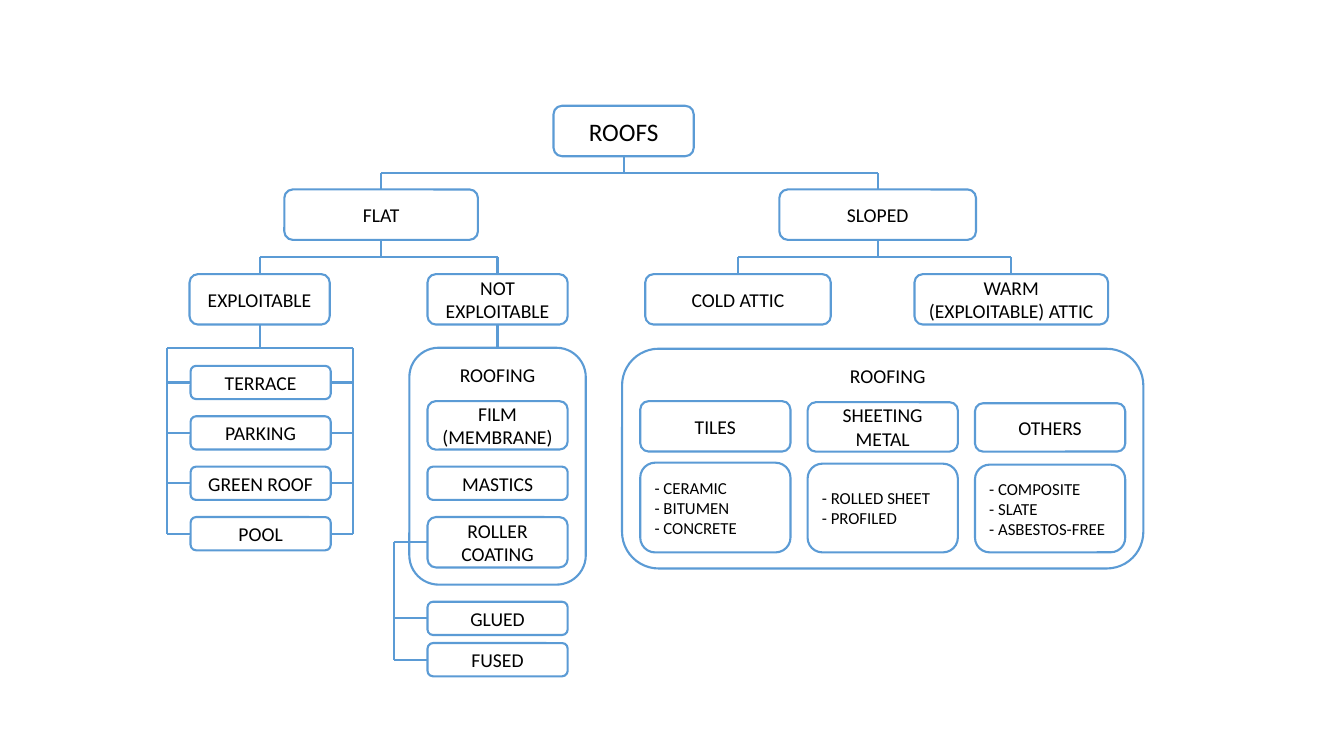
"""Builds a slide with a classification tree of roofs."""
from lxml.etree import SubElement
from pptx import Presentation
from pptx.dml.color import RGBColor
from pptx.enum.shapes import MSO_CONNECTOR, MSO_SHAPE
from pptx.enum.text import MSO_ANCHOR, PP_ALIGN
from pptx.oxml.ns import qn
from pptx.util import Inches, Pt

COLORS = {"line": "5B9BD5", "text": "000000"}
FONT = "Calibri"
TOP, LEFT, BOTTOM, RIGHT = range(4)

ROOT = ("ROOFS", 5.49, 1.05, 1.39)
BRANCHES = [
    ("FLAT", 2.82, 1.88, 1.92),
    ("SLOPED", 7.73, 1.88, 1.95),
    ("EXPLOITABLE", 1.88, 2.72, 1.39),
    ("NOT EXPLOITABLE", 4.24, 2.72, 1.39),
    ("COLD ATTIC", 6.4, 2.72, 1.84),
    ("WARM (EXPLOITABLE) ATTIC", 9.07, 2.72, 1.92),
]
TREE = [
    ("ROOFS", ["FLAT", "SLOPED"], 1.72),
    ("FLAT", ["EXPLOITABLE", "NOT EXPLOITABLE"], 2.55),
    ("SLOPED", ["COLD ATTIC", "WARM (EXPLOITABLE) ATTIC"], 2.55),
]
USES = ["TERRACE", "PARKING", "GREEN ROOF", "POOL"]
FLAT_ROOFING = [
    ("FILM (MEMBRANE)", 3.98, 0.48),
    ("MASTICS", 4.63, 0.33),
    ("ROLLER COATING", 5.13, 0.5),
    ("GLUED", 5.97, 0.33),
    ("FUSED", 6.38, 0.33),
]
SLOPED_ROOFING = [
    ("TILES", ["- CERAMIC", "- BITUMEN", "- CONCRETE"]),
    ("SHEETING METAL", ["- ROLLED SHEET", "- PROFILED"]),
    ("OTHERS", ["- COMPOSITE", "- SLATE", "- ASBESTOS-FREE"]),
]
FLAT_GROUP = (4.06, 3.45, 1.75, 2.35)
SLOPED_GROUP = (6.17, 3.46, 5.17, 2.18)
GROUP_LABELS = [("ROOFING", 3.98, 3.55, 1.91), ("ROOFING", 7.83, 3.56, 1.95)]
BOX_HEIGHT, ITEM_HEIGHT = 0.5, 0.33
USES_BAR_Y, USES_RAILS = 3.45, ((LEFT, 1.66), (RIGHT, 3.5))
ROLLER_RAIL_X = 3.91


def color(name):
    return RGBColor.from_string(COLORS[name])


def write(shape, lines, size=14, alignment=PP_ALIGN.CENTER):
    frame = shape.text_frame
    frame.word_wrap = True
    frame.vertical_anchor = MSO_ANCHOR.MIDDLE
    frame.text = "\n".join(lines)
    for paragraph in frame.paragraphs:
        paragraph.alignment = alignment
        paragraph.font.size = Pt(size)
        paragraph.font.name = FONT
        paragraph.font.color.rgb = color("text")


def add_box(slide, left, top, width, height):
    shape = slide.shapes.add_shape(
        MSO_SHAPE.ROUNDED_RECTANGLE, *map(Inches, (left, top, width, height)))
    shape.shadow.inherit = False
    shape.fill.background()
    shape.line.color.rgb = color("line")
    shape.line.width = Pt(1.5)
    return shape


def side_middle(shape, side):
    x = {LEFT: shape.left, RIGHT: shape.left + shape.width}.get(
        side, shape.left + shape.width // 2)
    y = {TOP: shape.top, BOTTOM: shape.top + shape.height}.get(
        side, shape.top + shape.height // 2)
    return x, y


def add_line(slide, start, end):
    line = slide.shapes.add_connector(MSO_CONNECTOR.STRAIGHT, *start, *end)
    line.line.color.rgb = color("line")
    line.line.width = Pt(1.5)
    SubElement(line._element.spPr, qn("a:effectLst"))
    return line


def add_stub(slide, shape, side, x=None, y=None):
    """Joins a side of a box to a rail and returns the point on the rail."""
    start = side_middle(shape, side)
    end = (start[0] if x is None else x, start[1] if y is None else y)
    add_line(slide, start, end).begin_connect(shape, side)
    return end


def main():
    presentation = Presentation()
    presentation.slide_width, presentation.slide_height = Inches(13.33), Inches(7.5)
    slide = presentation.slides.add_slide(presentation.slide_layouts[6])

    boxes = {}

    def add_node(text, left, top, width, height, size=14):
        boxes[text] = add_box(slide, left, top, width, height)
        write(boxes[text], [text], size)

    add_node(*ROOT, BOX_HEIGHT, 18)
    for branch in BRANCHES:
        add_node(*branch, BOX_HEIGHT)
    for row, use in enumerate(USES):
        add_node(use, 1.89, 3.63 + 0.5 * row, 1.39, ITEM_HEIGHT)
    for text, top, height in FLAT_ROOFING:
        add_node(text, 4.24, top, 1.39, height)
    for column, (text, details) in enumerate(SLOPED_ROOFING):
        left, shift = 6.35 + 1.66 * column, 0.01 * column
        add_node(text, left, 3.98 + shift, 1.49, 0.5 - shift)
        detail_box = add_box(slide, left, 4.59 + shift, 1.49, 0.89 - shift)
        write(detail_box, details, 12, PP_ALIGN.LEFT)

    flat_group = add_box(slide, *FLAT_GROUP)
    add_box(slide, *SLOPED_GROUP)
    for text, left, top, width in GROUP_LABELS:
        label = slide.shapes.add_textbox(
            *map(Inches, (left, top, width, ITEM_HEIGHT)))
        write(label, [text])

    for parent, children, bar_y in TREE:
        add_stub(slide, boxes[parent], BOTTOM, y=Inches(bar_y))
        ends = [add_stub(slide, boxes[child], TOP, y=Inches(bar_y))
                for child in children]
        add_line(slide, ends[0], ends[-1])

    bar_middle = add_stub(slide, boxes["EXPLOITABLE"], BOTTOM, y=Inches(USES_BAR_Y))
    for side, rail_x in USES_RAILS:
        ends = [add_stub(slide, boxes[use], side, x=Inches(rail_x)) for use in USES]
        corner = (Inches(rail_x), Inches(USES_BAR_Y))
        add_line(slide, bar_middle, corner)
        add_line(slide, corner, ends[-1])

    parent = boxes["NOT EXPLOITABLE"]
    link = add_line(slide, side_middle(parent, BOTTOM), side_middle(flat_group, TOP))
    link.begin_connect(parent, BOTTOM)
    link.end_connect(flat_group, TOP)

    ends = [add_stub(slide, boxes[text], LEFT, x=Inches(ROLLER_RAIL_X))
            for text in ("ROLLER COATING", "GLUED", "FUSED")]
    add_line(slide, ends[0], ends[-1])

    presentation.save("out.pptx")


if __name__ == "__main__":
    main()
